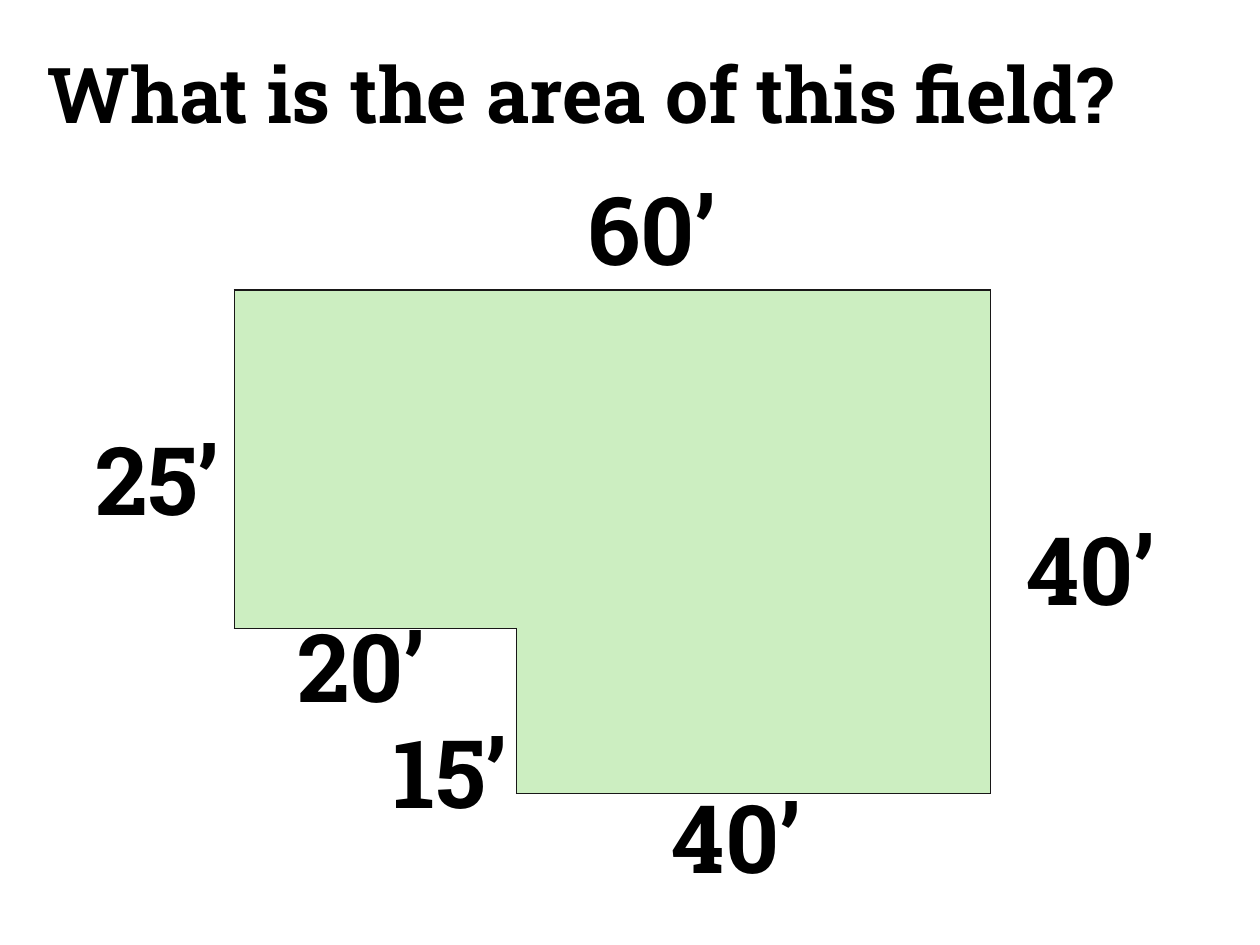
from lxml.etree import SubElement
from pptx import Presentation
from pptx.dml.color import RGBColor
from pptx.enum.text import MSO_ANCHOR as Anchor, MSO_AUTO_SIZE as AutoSize, PP_ALIGN as Align
from pptx.oxml.ns import qn
from pptx.util import Pt

FONT = "Roboto Slab"
INK, EDGE, GRASS = "000000", "181717", "CCEEC1"


def color(value):
    return RGBColor.from_string(value)


def place(s, left, top, width, height):
    s.left, s.top, s.width, s.height = Pt(left), Pt(top), Pt(width), Pt(height)


def add_run(p, text, size):
    r = p.add_run()
    r.text = text
    r.font.name = FONT
    r.font.size = Pt(size)
    r.font.bold = True
    r.font.color.rgb = color(INK)


def add_title(slide, text):
    s = slide.shapes.title
    place(s, 20.16, 28.8, 660.24, 54.72)
    tf = s.text_frame
    tf.word_wrap = True
    tf.auto_size = AutoSize.NONE
    tf.vertical_anchor = Anchor.MIDDLE
    p = tf.paragraphs[0]
    p.alignment = Align.LEFT
    p.line_spacing = 0.9
    add_run(p, text, 44)


def add_label(slide, text, left, top, width):
    s = slide.shapes.add_textbox(Pt(left), Pt(top), Pt(width), Pt(72.72))
    tf = s.text_frame
    tf.word_wrap = True
    tf.auto_size = AutoSize.SHAPE_TO_FIT_TEXT
    p = tf.paragraphs[0]
    p.alignment = Align.CENTER
    add_run(p, text, 54)


def style_cell(cell, sides, fill=None):
    props = cell._tc.get_or_add_tcPr()
    for side in "LRTB":
        line = SubElement(props, qn(f"a:ln{side}"), w=str(Pt(1)))
        if side in sides:
            solid = SubElement(line, qn("a:solidFill"))
            SubElement(solid, qn("a:srgbClr"), val=EDGE)
        else:
            SubElement(line, qn("a:noFill"))
    if fill:
        cell.fill.solid()
        cell.fill.fore_color.rgb = color(fill)
    else:
        cell.fill.background()


def add_field(slide):
    widths, heights = (161.28, 270.72), (193.68, 94.32)
    table = slide.shapes.add_table(
        2, 2, Pt(133.92), Pt(165.6), Pt(sum(widths)), Pt(sum(heights))).table
    table.first_row = table.horz_banding = False
    for column, width in zip(table.columns, widths):
        column.width = Pt(width)
    for row, height in zip(table.rows, heights):
        row.height = Pt(height)
    table.cell(0, 0).merge(table.cell(0, 1))
    style_cell(table.cell(0, 0), "LRTB", GRASS)
    style_cell(table.cell(0, 1), "RT", GRASS)
    style_cell(table.cell(1, 0), "RT")
    style_cell(table.cell(1, 1), "LRB", GRASS)


def main():
    prs = Presentation()
    prs.slide_width, prs.slide_height = Pt(720), Pt(540)
    slide = prs.slides.add_slide(prs.slide_layouts[5])
    add_field(slide)
    for label in (
        ("40’", 565.92, 288.72, 115.2),
        ("60’", 320.4, 94.32, 104.4),
        ("25’", 38.88, 236.88, 102.24),
        ("15’", 206.64, 404.64, 101.52),
        ("40’", 349.92, 441.36, 141.84),
        ("20’", 155.52, 344.16, 102.24),
    ):
        add_label(slide, *label)
    add_title(slide, "What is the area of this field?")
    prs.save("out.pptx")


if __name__ == "__main__":
    main()
